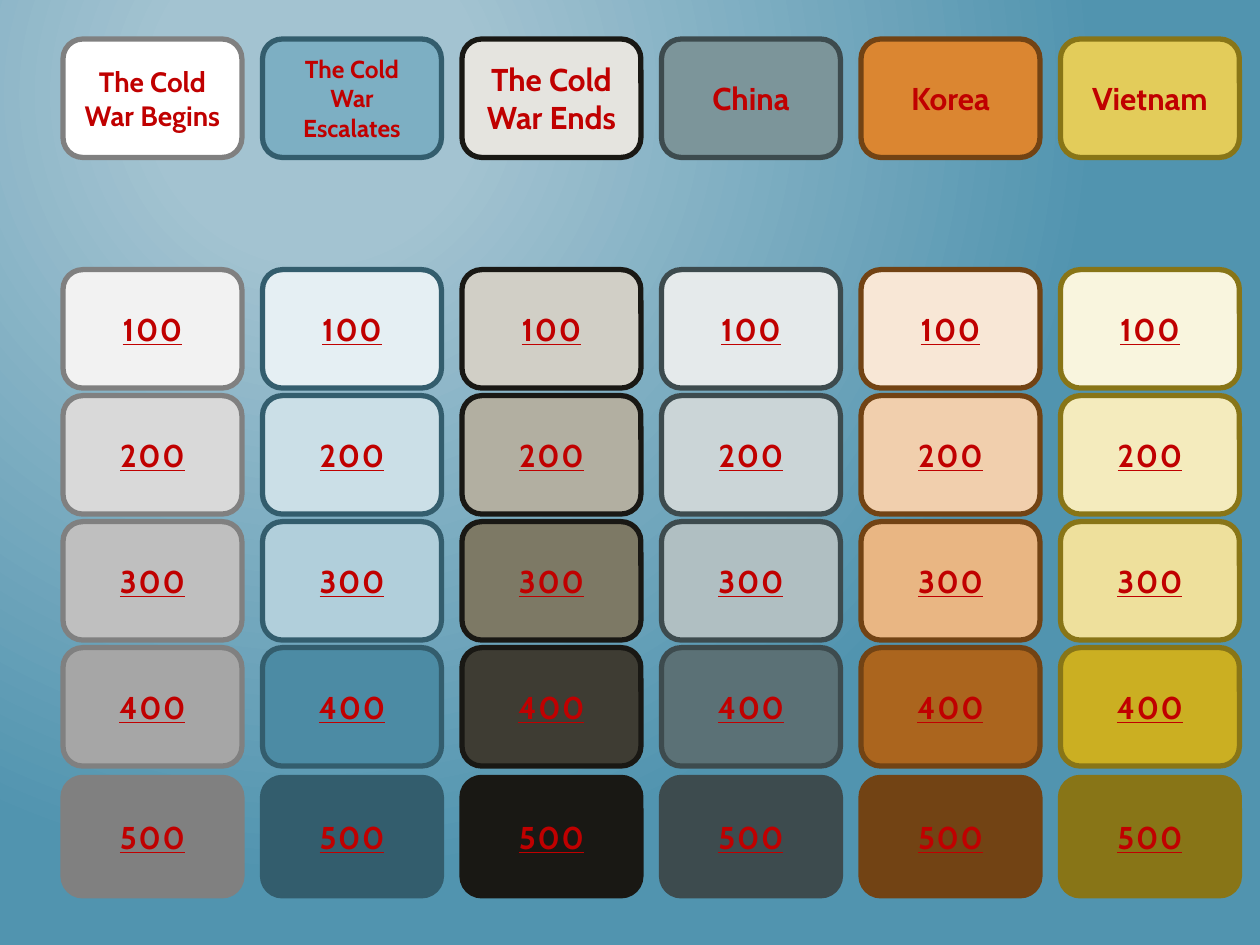
from lxml import etree
from pptx import Presentation
from pptx.dml.color import RGBColor
from pptx.enum.shapes import MSO_SHAPE
from pptx.enum.text import MSO_ANCHOR, PP_ALIGN
from pptx.oxml.ns import qn
from pptx.util import Inches, Pt

ROUNDED = MSO_SHAPE.ROUNDED_RECTANGLE
MIDDLE = MSO_ANCHOR.MIDDLE
CENTER = PP_ALIGN.CENTER

RED = RGBColor(0xC0, 0x00, 0x00)
SKY = RGBColor(0xA3, 0xC3, 0xD1)
TEAL = RGBColor(0x51, 0x94, 0xAF)
WHITE = RGBColor(0xFF, 0xFF, 0xFF)
GRAY = RGBColor(0x80, 0x80, 0x80)
BLUE = RGBColor(0x33, 0x5D, 0x6D)
BLACK = RGBColor(0x19, 0x18, 0x14)
SLATE = RGBColor(0x3D, 0x4B, 0x4E)
BROWN = RGBColor(0x72, 0x43, 0x14)
OLIVE = RGBColor(0x88, 0x75, 0x17)

# Fills from the 100 tile down to the 400 tile; the 500 tile takes the border colour
GRAY_TINTS = [RGBColor(0xF2, 0xF2, 0xF2), RGBColor(0xD9, 0xD9, 0xD9),
              RGBColor(0xBF, 0xBF, 0xBF), RGBColor(0xA6, 0xA6, 0xA6)]
BLUE_TINTS = [RGBColor(0xE5, 0xEF, 0xF3), RGBColor(0xCB, 0xDF, 0xE7),
              RGBColor(0xB1, 0xCF, 0xDB), RGBColor(0x4C, 0x8B, 0xA4)]
BLACK_TINTS = [RGBColor(0xD1, 0xCF, 0xC6), RGBColor(0xB2, 0xAF, 0xA1),
               RGBColor(0x7D, 0x79, 0x65), RGBColor(0x3E, 0x3C, 0x33)]
SLATE_TINTS = [RGBColor(0xE5, 0xEA, 0xEB), RGBColor(0xCB, 0xD5, 0xD7),
               RGBColor(0xB0, 0xBF, 0xC2), RGBColor(0x5B, 0x71, 0x76)]
BROWN_TINTS = [RGBColor(0xF8, 0xE7, 0xD6), RGBColor(0xF1, 0xCF, 0xAD),
               RGBColor(0xE9, 0xB6, 0x83), RGBColor(0xAB, 0x65, 0x1E)]
OLIVE_TINTS = [RGBColor(0xF9, 0xF5, 0xDE), RGBColor(0xF4, 0xEB, 0xBD),
               RGBColor(0xEE, 0xE0, 0x9C), RGBColor(0xCB, 0xAF, 0x22)]

# Category, heading size, heading fill, border, tints
CATEGORIES = [
    ("The Cold War Begins", 16, WHITE, GRAY, GRAY_TINTS),
    ("The Cold War Escalates", 14, RGBColor(0x7D, 0xAF, 0xC3), BLUE, BLUE_TINTS),
    ("The Cold War Ends", 18, RGBColor(0xE5, 0xE4, 0xDF), BLACK, BLACK_TINTS),
    ("China", 18, RGBColor(0x7C, 0x95, 0x9A), SLATE, SLATE_TINTS),
    ("Korea", 18, RGBColor(0xDB, 0x86, 0x31), BROWN, BROWN_TINTS),
    ("Vietnam", 18, RGBColor(0xE3, 0xCC, 0x5A), OLIVE, OLIVE_TINTS),
]


class Board:
    """Holds the tile style, the grid and the current slide."""
    FONT = {"name": "Cabin", "bold": True}
    LEFT, PITCH = 0.5, 19 / 12
    ROW_TOPS = [0.31, 2.14, 3.14, 4.14, 5.14, 6.17]
    WIDTH, HEIGHT = 1.42, 0.94
    BORDER = 3

    def __init__(self, page):
        self.page = page

    def backdrop(self, inner, outer):
        """Fill the background with a circular gradient."""
        fill = self.page.background.fill
        fill.gradient()
        stops = zip(fill.gradient_stops, [(0.2, inner), (1, outer)])
        for stop, (position, color) in stops:
            stop.position = position
            stop.color.rgb = color
        gradient = self.page._element.find(".//" + qn("a:gradFill"))
        gradient.remove(gradient.find(qn("a:lin")))
        circle = etree.Element(qn("a:path"), path="circle")
        etree.SubElement(circle, qn("a:fillToRect"),
                         l="50000", t="20000", r="100000", b="100000")
        gradient.find(qn("a:gsLst")).addnext(circle)

    def tile(self, column, row, text, fill, border, size=18, spacing=0, **font):
        """Place one rounded tile with centred text on the grid."""
        box = self.page.shapes.add_shape(
            ROUNDED, Inches(self.LEFT + column * self.PITCH),
            Inches(self.ROW_TOPS[row]), Inches(self.WIDTH), Inches(self.HEIGHT))
        box.shadow.inherit = False
        box.fill.solid()
        box.fill.fore_color.rgb = fill
        box.line.color.rgb = border
        box.line.width = Pt(self.BORDER)
        frame = box.text_frame
        frame.word_wrap = True
        frame.vertical_anchor = MIDDLE
        para = frame.paragraphs[0]
        para.alignment = CENTER
        span = para.add_run()
        span.text = text
        span.font.color.rgb = RED
        for name, value in {**self.FONT, "size": Pt(size), **font}.items():
            setattr(span.font, name, value)
        if spacing:
            span.font._element.set("spc", str(spacing * 100))


def main():
    deck = Presentation()
    deck.slide_width, deck.slide_height = Inches(10), Inches(7.5)
    board = Board(deck.slides.add_slide(deck.slide_layouts[6]))
    board.backdrop(SKY, TEAL)

    # One column per category: heading, then the five point tiles
    for column, (name, size, fill, border, tints) in enumerate(CATEGORIES):
        board.tile(column, 0, name, fill, border, size)
        for row, tint in enumerate(tints + [border], start=1):
            board.tile(column, row, str(row * 100), tint, border,
                       spacing=1, underline=True)

    deck.save("out.pptx")


if __name__ == "__main__":
    main()
